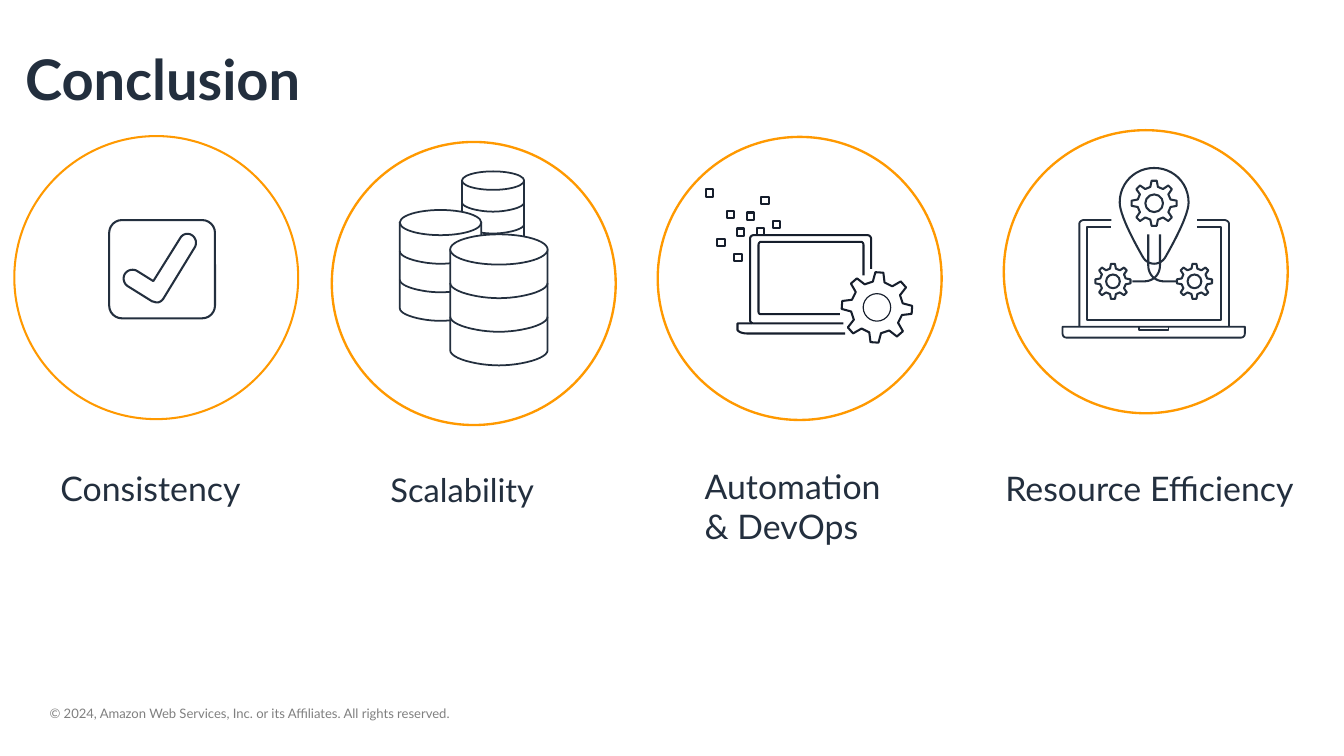
from math import cos, radians, sin

from pptx import Presentation
from pptx.dml.color import RGBColor
from pptx.enum.shapes import MSO_SHAPE
from pptx.enum.text import MSO_ANCHOR
from pptx.util import Inches, Pt

NAVY = RGBColor(0x23, 0x2F, 0x3E)
INK = RGBColor(0x16, 0x1E, 0x2C)
ORANGE = RGBColor(0xFF, 0x99, 0x00)
GRAY = RGBColor(0x80, 0x80, 0x80)
WHITE = RGBColor(0xFF, 0xFF, 0xFF)
FONT = "Lato"
CIRCLE_WIDTH, CIRCLE_HEIGHT = 3.38, 3.37
CURVE_STEPS = 12


# Drawing helpers
def style(shape, color, width, fill=None):
    shape.shadow.inherit = False
    if fill is None:
        shape.fill.background()
    else:
        shape.fill.solid()
        shape.fill.fore_color.rgb = fill
    shape.line.color.rgb = color
    shape.line.width = Pt(width)
    return shape


def add_preset(slide, kind, box, color, width, fill=None):
    shape = slide.shapes.add_shape(kind, *[Inches(value) for value in box])
    return style(shape, color, width, fill)


def curve_points(start, step):
    """Sample a cubic curve given as two control points and an end point."""
    controls = [start, step[0:2], step[2:4], step[4:6]]
    points = []
    for index in range(1, CURVE_STEPS + 1):
        t = index / CURVE_STEPS
        weights = ((1 - t) ** 3, 3 * t * (1 - t) ** 2, 3 * t * t * (1 - t), t ** 3)
        points.append(tuple(
            sum(weight * control[axis] for weight, control in zip(weights, controls))
            for axis in (0, 1)))
    return points


def add_outline(slide, origin, steps, color, width, closed=False, fill=None):
    """Steps are points (two numbers) or curves (six numbers)."""
    points = [steps[0]]
    for step in steps[1:]:
        points += [step] if len(step) == 2 else curve_points(points[-1], step)
    points = [(Inches(origin[0] + x), Inches(origin[1] + y)) for x, y in points]
    builder = slide.shapes.build_freeform(*points[0])
    builder.add_line_segments(points[1:], close=closed)
    return style(builder.convert_to_shape(), color, width, fill)


def mirror(steps, axis):
    return [tuple(2 * axis - value if index % 2 == 0 else value
                  for index, value in enumerate(step)) for step in steps]


def add_gear(slide, origin, x, y, radius, color, hole_width, tilt=0):
    corners = [(-13, 0.74), (-6.5, 1), (6.5, 1), (13, 0.74)]
    steps = []
    for tooth in range(8):
        for offset, ratio in corners:
            angle = radians(tilt + 45 * tooth + offset)
            steps.append((x + radius * ratio * cos(angle), y + radius * ratio * sin(angle)))
    add_outline(slide, origin, steps, color, 1.75, closed=True)
    hole = radius * 0.39
    add_preset(slide, MSO_SHAPE.OVAL,
               (origin[0] + x - hole, origin[1] + y - hole, 2 * hole, 2 * hole),
               color, hole_width)


def add_cylinder(slide, origin, left, top, width, depth, spacing):
    def rim(y):
        middle, right = left + width / 2, left + width
        bend_x, bend_y = width * 0.224, y + depth * 0.552
        return [(right, y),
                (right, bend_y, middle + bend_x, y + depth, middle, y + depth),
                (middle - bend_x, y + depth, left, bend_y, left, y)]

    body = [(left + width, top)] + rim(top + 3 * spacing) + [(left, top)]
    add_outline(slide, origin, body, NAVY, 1.5, closed=True, fill=WHITE)
    for band in (1, 2):
        add_outline(slide, origin, rim(top + band * spacing), NAVY, 1.5)
    add_preset(slide, MSO_SHAPE.OVAL,
               (origin[0] + left, origin[1] + top - depth, width, 2 * depth),
               NAVY, 1.5, WHITE)


def add_text(slide, box, lines, size, color, bold=False, inset=None, anchor=MSO_ANCHOR.TOP):
    frame = slide.shapes.add_textbox(*[Inches(value) for value in box]).text_frame
    frame.word_wrap = True
    frame.vertical_anchor = anchor
    if inset is not None:
        frame.margin_left = frame.margin_right = Inches(inset)
        frame.margin_top = frame.margin_bottom = Inches(inset)
    for index, line in enumerate(lines):
        paragraph = frame.add_paragraph() if index else frame.paragraphs[0]
        run = paragraph.add_run()
        run.text = line
        run.font.name = FONT
        run.font.size = Pt(size)
        run.font.bold = bold
        run.font.color.rgb = color


# Icons, each placed from the top left corner of its circle
def draw_checkbox(slide, origin):
    frame = add_preset(slide, MSO_SHAPE.ROUNDED_RECTANGLE,
                       (origin[0] + 1.13, origin[1] + 1, 1.26, 1.17), NAVY, 1.75)
    frame.adjustments[0] = 0.13
    check = [(2.2, 1.42), (1.7, 1.93), (1.69, 1.94, 1.66, 1.96, 1.63, 1.96),
             (1.61, 1.96, 1.58, 1.94, 1.56, 1.93), (1.32, 1.69),
             (1.28, 1.65, 1.28, 1.58, 1.32, 1.54), (1.36, 1.5, 1.43, 1.5, 1.47, 1.54),
             (1.63, 1.7), (2.06, 1.27), (2.1, 1.23, 2.16, 1.23, 2.2, 1.27),
             (2.24, 1.31, 2.24, 1.38, 2.2, 1.42)]
    add_outline(slide, origin, check, NAVY, 1.75, closed=True).rotation = -13


def draw_databases(slide, origin):
    for cylinder in [(1.55, 0.46, 0.74, 0.11, 0.26),
                     (0.81, 0.96, 0.97, 0.15, 0.34),
                     (1.41, 1.28, 1.16, 0.18, 0.4)]:
        add_cylinder(slide, origin, *cylinder)


def draw_automation(slide, origin):
    inner = [(2.45, 1.65), (2.45, 1.29), (2.45, 1.27, 2.44, 1.25, 2.42, 1.25),
             (1.23, 1.25), (1.21, 1.25, 1.2, 1.27, 1.2, 1.29), (1.2, 2.08),
             (1.2, 2.1, 1.21, 2.11, 1.23, 2.11), (2.17, 2.11)]
    outer = [(2.54, 1.57), (2.54, 1.21), (2.54, 1.19, 2.52, 1.17, 2.5, 1.17),
             (1.14, 1.17), (1.12, 1.17, 1.1, 1.19, 1.1, 1.21), (1.1, 2.18),
             (1.1, 2.2, 1.12, 2.22, 1.14, 2.22), (2.21, 2.22)]
    base = [(2.23, 2.34), (1.06, 2.34), (1.06, 2.34, 0.98, 2.34, 0.95, 2.3),
            (0.95, 2.22), (1.12, 2.22)]
    for steps in (inner, outer, base):
        add_outline(slide, origin, steps, INK, 1.75)
    add_gear(slide, origin, 2.61, 2.03, 0.42, INK, 1, tilt=4)
    for x, y in [(1.18, 1.08), (1.06, 0.9), (1.23, 0.71), (0.57, 0.62), (1.37, 1),
                 (0.94, 1.09), (0.91, 1.39), (0.71, 1.21), (0.82, 0.88)]:
        add_preset(slide, MSO_SHAPE.RECTANGLE,
                   (origin[0] + x, origin[1] + y, 0.09, 0.09), INK, 1.75)


def draw_resources(slide, origin):
    axis = 1.79
    pin = [(2.2, 0.86), (2.2, 1, 2.05, 1.29, 1.93, 1.5), (1.87, 1.62, 1.71, 1.62, 1.65, 1.5),
           (1.53, 1.29, 1.38, 1, 1.38, 0.86), (1.38, 0.63, 1.56, 0.45, 1.79, 0.45),
           (2.02, 0.45, 2.2, 0.63, 2.2, 0.86)]
    add_outline(slide, origin, pin, NAVY, 1.75, closed=True)
    cable = [(1.72, 1.24), (1.72, 1.61), (1.72, 1.72, 1.8, 1.8, 1.91, 1.8), (2.05, 1.8)]
    side = [(0.9, 2.34), (0.9, 1.11), (0.9, 1.09, 0.93, 1.07, 0.95, 1.07), (1.28, 1.07)]
    for steps, width in ((cable, 1.75), (side, 1.56)):
        add_outline(slide, origin, steps, NAVY, width)
        add_outline(slide, origin, mirror(steps, axis), NAVY, width)
    screen = [(2.3, 1.15), (2.59, 1.15), (2.59, 2.26), (0.99, 2.26), (0.99, 1.15), (1.28, 1.15)]
    notch = [(1.61, 2.34), (1.61, 2.38), (1.96, 2.38), (1.96, 2.34)]
    base = [(0.7, 2.34), (0.7, 2.42), (0.7, 2.45, 0.72, 2.47, 0.75, 2.47), (2.82, 2.47),
            (2.85, 2.47, 2.87, 2.45, 2.87, 2.42), (2.87, 2.34)]
    for steps in (screen, notch, base):
        add_outline(slide, origin, steps, NAVY, 1.56, closed=steps is base)
    for x, y, radius in [(axis, 0.87, 0.27), (2.27, 1.8, 0.21), (1.3, 1.8, 0.21)]:
        add_gear(slide, origin, x, y, radius, NAVY, 1.75)


# One takeaway: circle, icon and label
def add_takeaway(slide, origin, ring_width, draw_icon, label_box, lines, size):
    add_preset(slide, MSO_SHAPE.OVAL, (*origin, CIRCLE_WIDTH, CIRCLE_HEIGHT),
               ORANGE, ring_width, WHITE)
    draw_icon(slide, origin)
    add_text(slide, label_box, lines, size, NAVY)


TAKEAWAYS = [
    ((0.17, 1.62), 1.75, draw_checkbox, (0.62, 5.52, 2.48, 0.59), ["Consistency"], 29),
    ((3.95, 1.69), 2, draw_databases, (4.55, 5.54, 2.69, 0.57), ["Scalability"], 28),
    ((7.83, 1.63), 2, draw_automation, (8.29, 5.49, 2.51, 1.08), ["Automation", "& DevOps"], 29),
    ((11.95, 1.55), 2, draw_resources, (11.87, 5.52, 3.75, 0.59), ["Resource Efficiency"], 29),
]


def main():
    presentation = Presentation()
    presentation.slide_width, presentation.slide_height = Inches(16), Inches(9)
    slide = presentation.slides.add_slide(presentation.slide_layouts[6])
    # Title and copyright line
    add_text(slide, (0.2, 0.43, 14.78, 0.99), ["Conclusion"], 48, NAVY, bold=True,
             anchor=MSO_ANCHOR.MIDDLE)
    add_text(slide, (0.59, 8.4, 7.78, 0.19),
             ["© 2024, Amazon Web Services, Inc. or its Affiliates. All rights reserved."],
             11.2, GRAY, inset=0)
    for takeaway in TAKEAWAYS:
        add_takeaway(slide, *takeaway)
    presentation.save("out.pptx")


if __name__ == "__main__":
    main()
